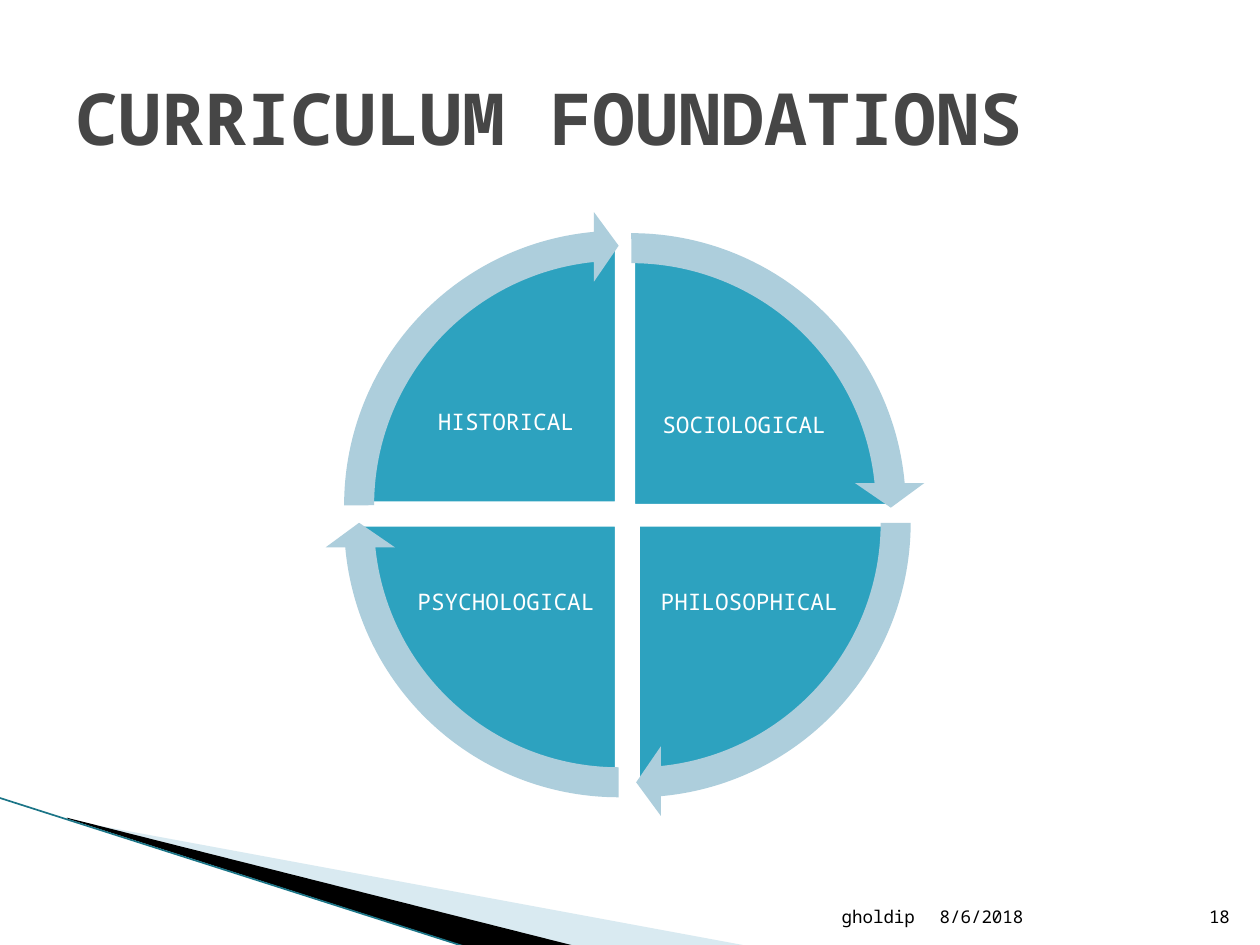
"""Builds the curriculum foundations slide: a four-part cycle with arrows."""
from lxml import etree
from pptx import Presentation
from pptx.dml.color import RGBColor
from pptx.enum.shapes import MSO_CONNECTOR, MSO_SHAPE
from pptx.enum.text import MSO_ANCHOR, PP_ALIGN
from pptx.oxml.ns import qn
from pptx.util import Pt

C = {"pie": "2DA2BF", "arrow": "ADCEDC", "white": "FFFFFF", "black": "000000",
     "title": "464646", "band": "A0CBDC", "edge": "1B7587"}
FONT = "Noto Sans Mono"


def paint(sp, fill, line=None):
    sp.shadow.inherit = False
    sp.fill.solid()
    sp.fill.fore_color.rgb = RGBColor.from_string(C[fill])
    if line:
        sp.line.color.rgb = RGBColor.from_string(C[line])
        sp.line.width = Pt(4.33)
    else:
        sp.line.fill.background()


def write(sp, text, size, color, align, anchor, inset=None, **para):
    tf = sp.text_frame
    tf.word_wrap = True
    tf.vertical_anchor = anchor
    if inset is not None:
        for side in ("left", "top", "right", "bottom"):
            setattr(tf, f"margin_{side}", Pt(inset))
    p = tf.paragraphs[0]
    for name, value in {"alignment": align, **para}.items():
        setattr(p, name, value)
    r = p.add_run()
    r.text = text
    bold = color == "title"
    for name, value in {"name": FONT, "size": Pt(size), "bold": bold}.items():
        setattr(r.font, name, value)
    r.font.color.rgb = RGBColor.from_string(C[color])


prs = Presentation()
prs.slide_width, prs.slide_height = Pt(720), Pt(540)
s = prs.slides.add_slide(prs.slide_layouts[5])

WEDGES = [
    ("band", [(39.6, 468.7), (428.4, 540.7), (328.3, 540.7), (39.6, 468)]),
    ("black", [(38.2, 467.3), (329, 540.7), (267.8, 541.4), (38.9, 468)]),
]
for color, points in WEDGES:
    corners = [(Pt(x), Pt(y)) for x, y in points]
    builder = s.shapes.build_freeform(*corners[0])
    builder.add_line_segments(corners[1:], close=True)
    wedge = builder.convert_to_shape()
    paint(wedge, color)
    if color == "band":
        clr = wedge.fill._xPr.find(qn("a:solidFill"))[0]
        etree.SubElement(clr, qn("a:alpha")).set("val", "40000")

edge = s.shapes.add_connector(MSO_CONNECTOR.STRAIGHT, Pt(-0.7), Pt(455.8), Pt(267.1), Pt(541.4))
edge.line.color.rgb = RGBColor.from_string(C["edge"])
edge.line.width = Pt(0.95)
etree.SubElement(edge._element.spPr, qn("a:effectLst"))

PIE, RIM = 299.5, 18.4
QUARTERS = [
    ("SOCIOLOGICAL", 211, 140.4, 370.1, 202.3, 162),
    ("PHILOSOPHICAL", 213.8, 149, 373, 303.8, 0),
    ("PSYCHOLOGICAL", 203.8, 149, 234, 303.8, 54),
    ("HISTORICAL", 203.8, 139, 234, 200.9, 108),
]
cycle = s.shapes.add_group_shape().shapes
for label, x, y, text_x, text_y, start in QUARTERS:
    pie = cycle.add_shape(MSO_SHAPE.PIE, Pt(x), Pt(y), Pt(PIE), Pt(PIE))
    pie.adjustments[0] = start
    pie.adjustments[1] = (start + 54) % 216
    paint(pie, "pie", "white")
    box = cycle.add_textbox(Pt(text_x), Pt(text_y), Pt(110.2), Pt(82.1))
    write(box, label, 13, "white", PP_ALIGN.CENTER, MSO_ANCHOR.MIDDLE, 1.3, line_spacing=0.9)

for label, x, y, text_x, text_y, start in QUARTERS:
    size = PIE + 2 * RIM
    arrow = cycle.add_shape(MSO_SHAPE.CIRCULAR_ARROW, Pt(x - RIM), Pt(y - RIM), Pt(size), Pt(size))
    for i, value in enumerate((0.051, 3.275, start + 50.725, start, 0.059)):
        arrow.adjustments[i] = value
    paint(arrow, "arrow")

FOOTERS = [
    ("8/6/2018", 529.9, 151.2, PP_ALIGN.LEFT),
    ("gholdip", 344.9, 185, PP_ALIGN.RIGHT),
    ("18", 681.1, 28.8, PP_ALIGN.RIGHT),
]
for text, x, width, align in FOOTERS:
    box = s.shapes.add_textbox(Pt(x), Pt(504.7), Pt(width), Pt(28.8))
    write(box, text, 10, "black", align, MSO_ANCHOR.BOTTOM)

title = s.shapes.title
title.left, title.top, title.width, title.height = Pt(36), Pt(21.6), Pt(648), Pt(90)
write(title, "CURRICULUM FOUNDATIONS", 41, "title", PP_ALIGN.LEFT, MSO_ANCHOR.MIDDLE)

prs.save("out.pptx")
